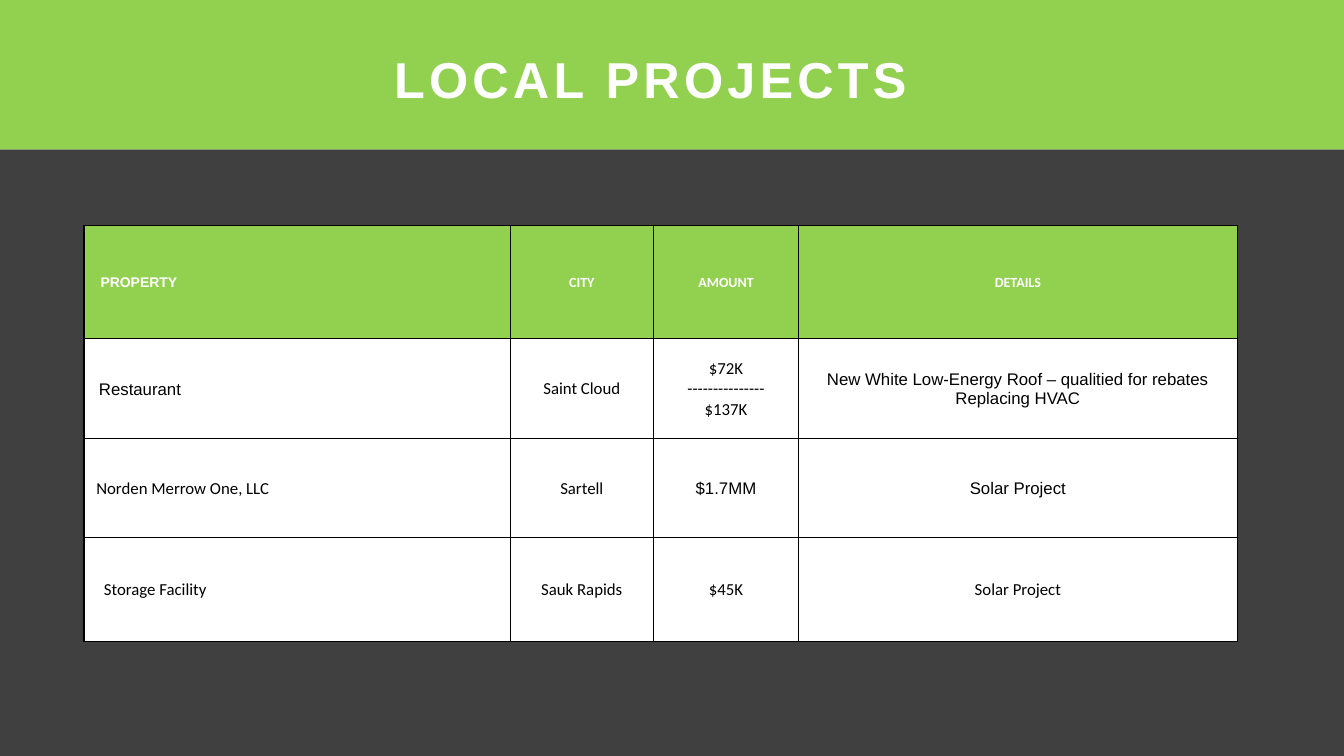
from lxml.etree import SubElement
from pptx import Presentation
from pptx.dml.color import RGBColor
from pptx.enum.shapes import MSO_SHAPE
from pptx.enum.text import MSO_ANCHOR, MSO_AUTO_SIZE, PP_ALIGN
from pptx.oxml.ns import qn
from pptx.util import Pt

GREEN = RGBColor(0x92, 0xD0, 0x50)
DARK = RGBColor(0x40, 0x40, 0x40)
WHITE = RGBColor(0xFF, 0xFF, 0xFF)
BLACK = RGBColor(0x00, 0x00, 0x00)

# Content: each cell is (text, font); \v breaks a line, \n starts a paragraph
TITLE = "LOCAL PROJECTS"
PROJECTS = [
    [("PROPERTY", "Arial"), ("CITY", "Calibri"),
     ("AMOUNT", "Calibri"), ("DETAILS", "Calibri")],
    [("Restaurant", "Arial"), ("Saint Cloud", "Calibri"),
     ("$72K\v---------------\v$137K", "Calibri"),
     ("New White Low-Energy Roof – qualitied for rebates\nReplacing HVAC", "Arial")],
    [("Norden Merrow One, LLC", "Calibri"), ("Sartell", "Calibri"),
     ("$1.7MM", "Arial"), ("Solar Project", "Arial")],
    [("Storage Facility", "Calibri"), ("Sauk Rapids", "Calibri"),
     ("$45K", "Calibri"), ("Solar Project", "Calibri")],
]
PROPERTY_INDENTS = [11.8, 10.7, 8.8, 14.2]

# Layout in points
SLIDE_WIDTH, SLIDE_HEIGHT = 960, 540
BAND_HEIGHT = 106.8
TITLE_BOX = (46, 30.5, 837.5, 51)
TABLE_LEFT, TABLE_TOP = 60, 161.3
COLUMN_WIDTHS = [304.5, 102.2, 103.8, 313.2]
ROW_HEIGHTS = [80.6, 71.5, 70.8, 74]
CELL_FORMAT = {
    "vertical_anchor": MSO_ANCHOR.MIDDLE,
    "margin_left": Pt(0.7), "margin_top": Pt(0.7),
    "margin_right": Pt(0.7), "margin_bottom": Pt(0),
}


def apply(target, values):
    for name, value in values.items():
        setattr(target, name, value)


def format_font(font, name, size, color, bold):
    apply(font, {"name": name, "size": Pt(size), "bold": bold})
    font.color.rgb = color


def add_panel(slide, top, height, color):
    shape = slide.shapes.add_shape(
        MSO_SHAPE.RECTANGLE, Pt(0), Pt(top), Pt(SLIDE_WIDTH), Pt(height))
    shape.shadow.inherit = False
    shape.fill.solid()
    shape.fill.fore_color.rgb = color
    shape.line.fill.background()


def add_borders(cell):
    properties = cell._tc.get_or_add_tcPr()
    for position, side in enumerate(("lnL", "lnR", "lnT", "lnB")):
        line = SubElement(properties, qn(f"a:{side}"), w=str(Pt(1)))
        fill = SubElement(line, qn("a:solidFill"))
        SubElement(fill, qn("a:srgbClr"), val=str(BLACK))
        properties.insert(position, line)


def fill_cell(cell, text, font_name, is_header, indent):
    apply(cell, CELL_FORMAT)
    cell.fill.solid()
    cell.fill.fore_color.rgb = GREEN if is_header else WHITE
    add_borders(cell)
    if indent is not None:
        cell.margin_left = Pt(indent)
    cell.text_frame.text = text
    for paragraph in cell.text_frame.paragraphs:
        paragraph.alignment = PP_ALIGN.CENTER if indent is None else PP_ALIGN.LEFT
        for run in paragraph.runs:
            format_font(run.font, font_name, 10 if is_header else 12,
                        WHITE if is_header else BLACK, is_header)


def main():
    presentation = Presentation()
    apply(presentation, {"slide_width": Pt(SLIDE_WIDTH), "slide_height": Pt(SLIDE_HEIGHT)})
    slide = presentation.slides.add_slide(presentation.slide_layouts[5])

    # Background panels
    add_panel(slide, BAND_HEIGHT, SLIDE_HEIGHT - BAND_HEIGHT, DARK)
    add_panel(slide, 0, BAND_HEIGHT, GREEN)

    # Title, brought in front of the panels
    title = slide.shapes.title
    apply(title, dict(zip(("left", "top", "width", "height"), map(Pt, TITLE_BOX))))
    title.text_frame.text = TITLE
    apply(title.text_frame, {"auto_size": MSO_AUTO_SIZE.NONE, "word_wrap": True,
                             "vertical_anchor": MSO_ANCHOR.MIDDLE})
    paragraph = title.text_frame.paragraphs[0]
    paragraph.alignment = PP_ALIGN.CENTER
    run = paragraph.runs[0]
    format_font(run.font, "Arial", 36, WHITE, True)
    run.font._element.set("spc", "300")
    slide.shapes._spTree.append(title._element)

    # Project table
    table = slide.shapes.add_table(
        len(ROW_HEIGHTS), len(COLUMN_WIDTHS), Pt(TABLE_LEFT), Pt(TABLE_TOP),
        Pt(sum(COLUMN_WIDTHS)), Pt(sum(ROW_HEIGHTS))).table
    for column, width in zip(table.columns, COLUMN_WIDTHS):
        column.width = Pt(width)
    for row, height in zip(table.rows, ROW_HEIGHTS):
        row.height = Pt(height)
    for row_index, project in enumerate(PROJECTS):
        for column_index, (text, font_name) in enumerate(project):
            indent = PROPERTY_INDENTS[row_index] if column_index == 0 else None
            fill_cell(table.cell(row_index, column_index), text, font_name,
                      row_index == 0, indent)

    presentation.save("out.pptx")


if __name__ == "__main__":
    main()
